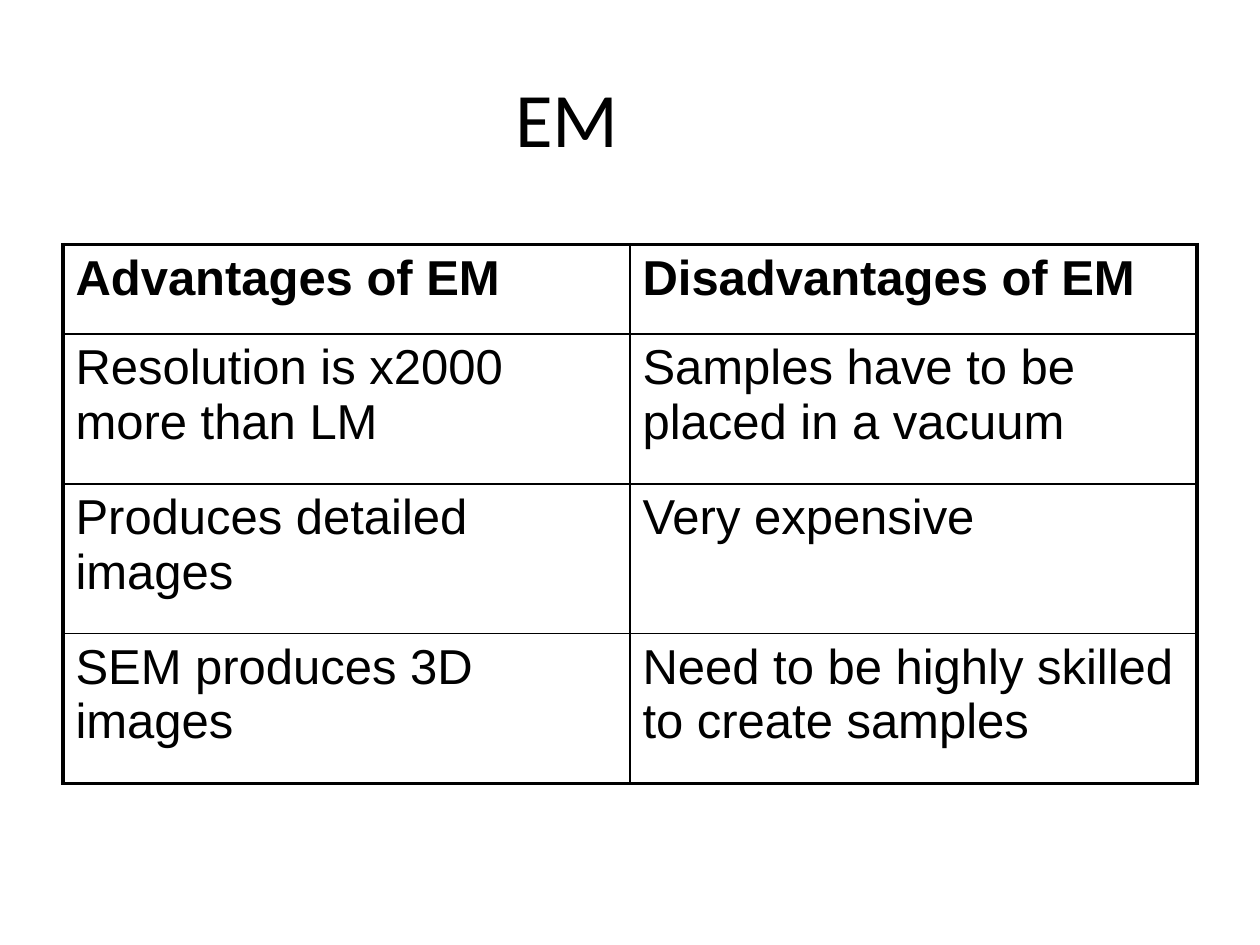
from dataclasses import dataclass

from lxml.etree import SubElement
from pptx import Presentation
from pptx.dml.color import RGBColor
from pptx.enum.text import MSO_ANCHOR, PP_ALIGN
from pptx.oxml.ns import qn
from pptx.util import Inches, Pt


@dataclass(frozen=True)
class Theme:
    ink: str = "000000"
    title_font: str = "Calibri"
    table_font: str = "Arial"
    title_size: int = 44
    table_size: int = 28
    outer_line: float = 2.25
    inner_line: float = 1


theme = Theme()
ink = RGBColor.from_string(theme.ink)

ROWS = [
    ("Advantages of EM", "Disadvantages of EM"),
    ("Resolution is x2000 more than LM", "Samples have to be placed in a vacuum"),
    ("Produces detailed images", "Very expensive"),
    ("SEM produces 3D images", "Need to be highly skilled to create samples"),
]
HEADER_HEIGHT, ROW_HEIGHT, COL_WIDTH = 0.71, 1.19, 4.5


def set_border(cell, side, width):
    """Draw one cell edge; side is L, R, T or B, in that schema order."""
    ln = SubElement(cell._tc.get_or_add_tcPr(), qn(f"a:ln{side}"), w=str(Pt(width)))
    fill = SubElement(ln, qn("a:solidFill"))
    SubElement(fill, qn("a:srgbClr"), val=theme.ink)


prs = Presentation()
prs.slide_width, prs.slide_height = Inches(10), Inches(7.5)
s = prs.slides.add_slide(prs.slide_layouts[5])

# Title
title = s.shapes.title
title.left, title.top = Inches(0), Inches(0.3)
title.width, title.height = Inches(9), Inches(1.25)
tf = title.text_frame
tf.text = "EM"
tf.vertical_anchor = MSO_ANCHOR.MIDDLE
p = tf.paragraphs[0]
p.alignment = PP_ALIGN.CENTER
p.font.name = theme.title_font
p.font.size = Pt(theme.title_size)
p.font.color.rgb = ink

# Comparison table
n_rows, n_cols = len(ROWS), len(ROWS[0])
heights = [HEADER_HEIGHT] + [ROW_HEIGHT] * (n_rows - 1)
table = s.shapes.add_table(
    n_rows, n_cols, Inches(0.5), Inches(1.94),
    Inches(COL_WIDTH * n_cols), Inches(sum(heights)),
).table
table.first_row = table.horz_banding = False
for col in table.columns:
    col.width = Inches(COL_WIDTH)

for i, (texts, height) in enumerate(zip(ROWS, heights)):
    table.rows[i].height = Inches(height)
    for j, text in enumerate(texts):
        cell = table.cell(i, j)
        cell.text = text
        p = cell.text_frame.paragraphs[0]
        p.font.name = theme.table_font
        p.font.size = Pt(theme.table_size)
        p.font.bold = i == 0
        p.font.color.rgb = ink
        on_edge = {"L": j == 0, "R": j == n_cols - 1,
                   "T": i == 0, "B": i == n_rows - 1}
        for side, outer in on_edge.items():
            set_border(cell, side, theme.outer_line if outer else theme.inner_line)
        cell.fill.background()

prs.save("out.pptx")
